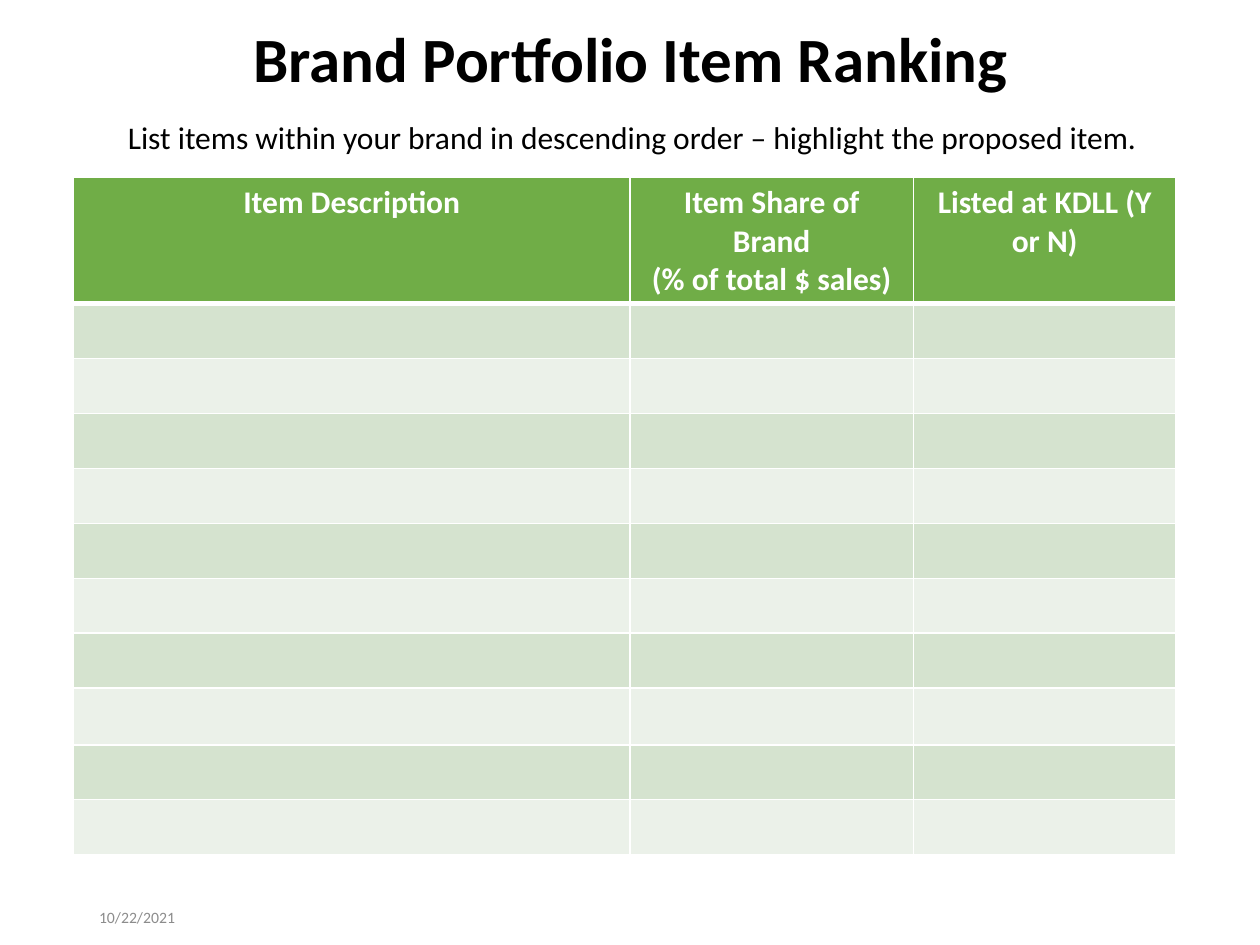
from dataclasses import dataclass

from lxml import etree
from pptx import Presentation
from pptx.dml.color import RGBColor
from pptx.enum import text
from pptx.oxml.ns import qn
from pptx.util import Pt


@dataclass(frozen=True)
class Theme:
    font: str = "Calibri"
    ink: str = "000000"
    white: str = "FFFFFF"
    muted: str = "8C8C8C"
    head: str = "70AD47"
    bands: tuple = ("D5E3CF", "EBF1E9")
    title: float = 36
    body: float = 18
    small: float = 9
    thin: float = 1
    thick: float = 3


class Deck:
    def __init__(self, theme, width, height):
        self.theme = theme
        self.prs = Presentation()
        self.prs.slide_width, self.prs.slide_height = Pt(width), Pt(height)
        self.slide = self.prs.slides.add_slide(self.prs.slide_layouts[5])

    def style(self, para, size, color, bold=False, align=None):
        font = para.font
        font.name, font.size, font.bold = self.theme.font, Pt(size), bold
        font.color.rgb = RGBColor.from_string(color)
        para.alignment = align

    def title(self, words, box):
        shape = self.slide.shapes.title
        shape.left, shape.top, shape.width, shape.height = map(Pt, box)
        frame = shape.text_frame
        frame.text = words
        frame.auto_size = text.MSO_AUTO_SIZE.NONE
        frame.vertical_anchor = text.MSO_ANCHOR.MIDDLE
        para = frame.paragraphs[0]
        self.style(para, self.theme.title, self.theme.ink, True, text.PP_ALIGN.CENTER)
        para.line_spacing = 0.9

    def label(self, words, box, size, color, anchor=text.MSO_ANCHOR.TOP):
        frame = self.slide.shapes.add_textbox(*map(Pt, box)).text_frame
        frame.word_wrap = True
        frame.vertical_anchor = anchor
        frame.text = words
        para = frame.paragraphs[0]
        self.style(para, size, color)
        return para

    def edge(self, cell, side, width):
        props = cell._tc.get_or_add_tcPr()
        line = etree.SubElement(props, qn(f"a:ln{side}"), w=str(Pt(width)))
        fill = etree.SubElement(line, qn("a:solidFill"))
        etree.SubElement(fill, qn("a:srgbClr"), val=self.theme.white)

    def paint(self, cell, row):
        """Draw the cell's edges, with a heavy rule below the header, then fill it."""
        theme = self.theme
        heavy = {(0, "B"), (1, "T")}
        for side in "LRTB":
            self.edge(cell, side, theme.thick if (row, side) in heavy else theme.thin)
        cell.fill.solid()
        color = theme.bands[(row - 1) % 2] if row else theme.head
        cell.fill.fore_color.rgb = RGBColor.from_string(color)

    def table(self, heads, spot, widths, heights):
        theme = self.theme
        frame = self.slide.shapes.add_table(
            len(heights), len(widths), *map(Pt, spot), Pt(sum(widths)), Pt(sum(heights)))
        grid = frame.table
        for col, width in zip(grid.columns, widths):
            col.width = Pt(width)
        for i, (row, height) in enumerate(zip(grid.rows, heights)):
            row.height = Pt(height)
            for cell in row.cells:
                self.paint(cell, i)
        for cell, words in zip(grid.rows[0].cells, heads):
            cell.text = words
            for para in cell.text_frame.paragraphs:
                self.style(para, theme.body, theme.white, True, text.PP_ALIGN.CENTER)


def main():
    theme = Theme()
    deck = Deck(theme, 720, 540)
    deck.title("Brand Portfolio Item Ranking", (36.5, 11.5, 648, 48))
    deck.label("10/22/2021", (49.5, 518.5, 162, 11), theme.small, theme.muted,
               text.MSO_ANCHOR.MIDDLE)
    deck.table(
        ["Item Description",
         "Item Share of Brand\n(% of total $ sales)",
         "Listed at KDLL (Y or N)"],
        (42, 101.5), (318, 162, 150), [36] + [31.4] * 7 + [32.4] + [31.4] * 2)
    intro = deck.label(
        "List items within your brand in descending order – highlight the proposed item.",
        (66, 66.5, 606, 36), theme.body, theme.ink)
    intro.line_spacing = 0.9
    intro.space_before = Pt(7.5)
    deck.prs.save("out.pptx")


if __name__ == "__main__":
    main()
